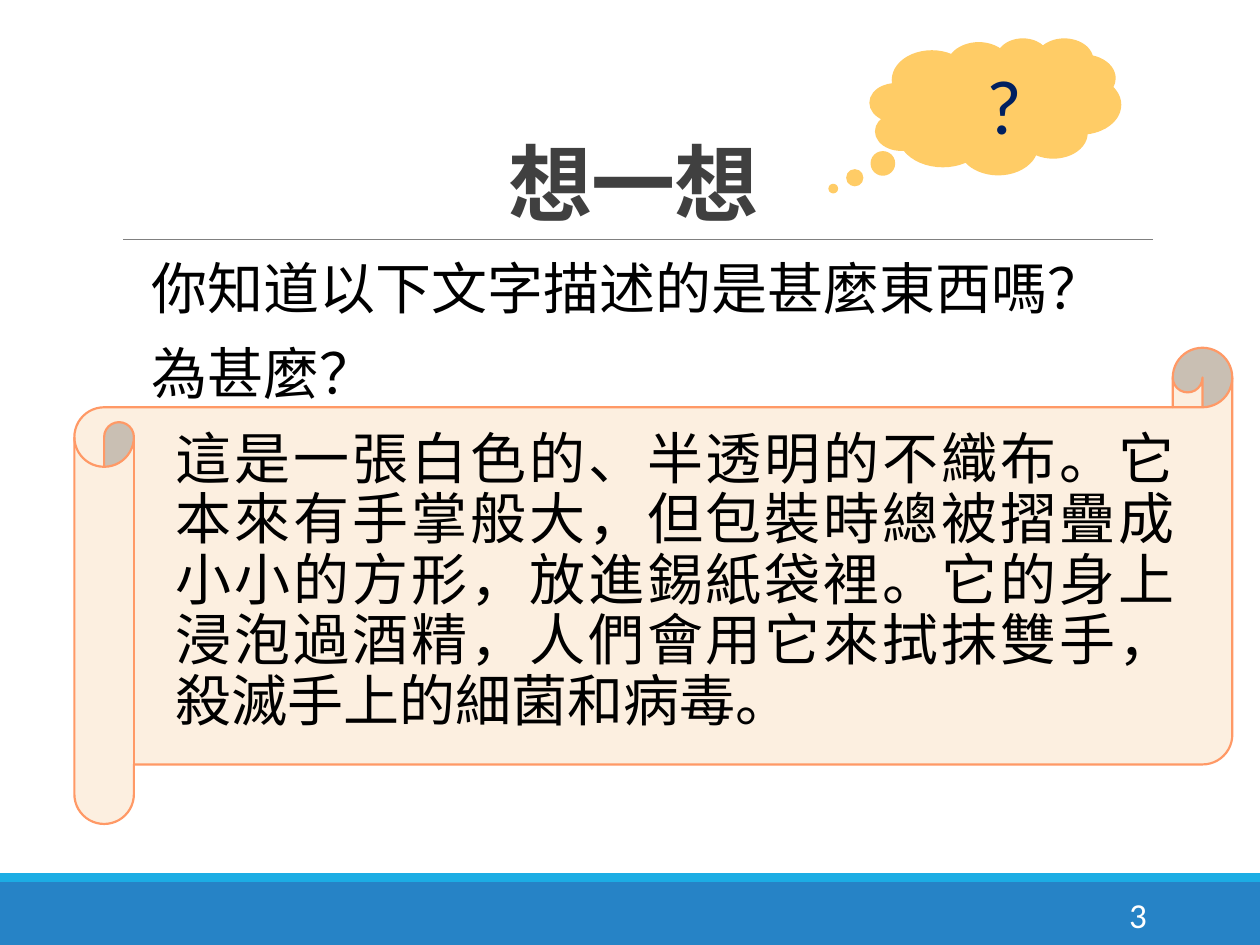
from lxml import etree
from pptx import Presentation
from pptx.dml.color import RGBColor
from pptx.enum.shapes import MSO_CONNECTOR, MSO_SHAPE
from pptx.enum.text import MSO_ANCHOR, MSO_AUTO_SIZE, PP_ALIGN
from pptx.oxml.ns import qn
from pptx.util import Inches, Pt

RECTANGLE = MSO_SHAPE.RECTANGLE
SCROLL = MSO_SHAPE.HORIZONTAL_SCROLL
CLOUD = MSO_SHAPE.CLOUD_CALLOUT
STRAIGHT = MSO_CONNECTOR.STRAIGHT
MIDDLE, BOTTOM, TOP = MSO_ANCHOR.MIDDLE, MSO_ANCHOR.BOTTOM, MSO_ANCHOR.TOP
LEFT, CENTER, RIGHT = PP_ALIGN.LEFT, PP_ALIGN.CENTER, PP_ALIGN.RIGHT
JUSTIFY = PP_ALIGN.JUSTIFY
NO_AUTOFIT = MSO_AUTO_SIZE.NONE

BLUE = RGBColor(0x26, 0x83, 0xC6)
CYAN = RGBColor(0x1C, 0xAD, 0xE4)
GRAY = RGBColor(0x80, 0x80, 0x80)
CREAM = RGBColor(0xFC, 0xEF, 0xE0)
ORANGE = RGBColor(0xFF, 0x99, 0x66)
YELLOW = RGBColor(0xFF, 0xCC, 0x66)
NAVY = RGBColor(0x00, 0x20, 0x60)
DARK = RGBColor(0x40, 0x40, 0x40)
BLACK = RGBColor(0, 0, 0)
WHITE = RGBColor(0xFF, 0xFF, 0xFF)

CHINESE_FONT = "Noto Sans CJK SC"
LATIN_FONT = "Calibri"


def add_filled_shape(preset, left, top, width, height, fill, outline=None):
    shape = slide.shapes.add_shape(
        preset, Inches(left), Inches(top), Inches(width), Inches(height))
    shape.shadow.inherit = False
    shape.fill.solid()
    shape.fill.fore_color.rgb = fill
    if outline is None:
        shape.line.fill.background()
    else:
        shape.line.color.rgb = outline
        shape.line.width = Pt(1.25)
    return shape


def add_text(paragraph, text, font_name, size, color, align):
    """Add one run and set its font for Latin and East Asian text alike."""
    paragraph.alignment = align
    run = paragraph.add_run()
    run.text = text
    run.font.name = font_name
    run.font.size = Pt(size)
    run.font.color.rgb = color
    east_asian = etree.SubElement(run.font._element, qn("a:ea"))
    east_asian.set("typeface", font_name)
    return run


prs = Presentation()
prs.slide_width = Inches(10)
prs.slide_height = Inches(7.5)
slide = prs.slides.add_slide(prs.slide_layouts[1])
title, body = slide.placeholders

# Footer bands and title rule
add_filled_shape(RECTANGLE, 0, 7, 10, 0.5, BLUE)
add_filled_shape(RECTANGLE, 0, 6.93, 10, 0.07, CYAN)
title_rule = slide.shapes.add_connector(
    STRAIGHT, Inches(0.98), Inches(1.9), Inches(9.15), Inches(1.9))
title_rule.line.color.rgb = GRAY
title_rule.line.width = Pt(0.5)
etree.SubElement(title_rule._element.spPr, qn("a:effectLst"))

# The scroll lies behind the title and body text
add_filled_shape(SCROLL, 0.59, 2.76, 9.19, 3.78, CREAM, ORANGE)
for placeholder in (title, body):
    slide.shapes._spTree.append(placeholder._element)

# Title
title.left, title.top = Inches(0.9), Inches(0.31)
title.width, title.height = Inches(8.25), Inches(1.59)
title.text_frame.auto_size = NO_AUTOFIT
title.text_frame.vertical_anchor = BOTTOM
heading = title.text_frame.paragraphs[0]
heading.line_spacing = 0.85
heading_run = add_text(heading, "想一想", CHINESE_FONT, 48, DARK, CENTER)
heading_run.font.bold = True
heading_run.font._element.set("spc", "-50")

# Questions and the description on the scroll
body.left, body.top = Inches(0.9), Inches(2.02)
body.width, body.height = Inches(8.43), Inches(4.4)
body_frame = body.text_frame
body_frame.auto_size = NO_AUTOFIT
body_frame.vertical_anchor = TOP
body_frame.margin_left = body_frame.margin_right = 0
body_lines = [
    ("你知道以下文字描述的是甚麼東西嗎？", 0.3, LEFT),
    ("為甚麼？", 0.3, LEFT),
    ("這是一張白色的、半透明的不織布。它本來有手掌般大，但包裝時總被摺疊成"
     "小小的方形，放進錫紙袋裡。它的身上浸泡過酒精，人們會用它來拭抹雙手，"
     "殺滅手上的細菌和病毒。", 0.49, JUSTIFY),
]
for index, (text, indent, align) in enumerate(body_lines):
    paragraph = body_frame.add_paragraph() if index else body_frame.paragraphs[0]
    paragraph.line_spacing = 0.9
    paragraph.space_before = Pt(12)
    paragraph.space_after = Pt(2)
    add_text(paragraph, text, CHINESE_FONT, 32, BLACK, align)
    properties = paragraph._p.get_or_add_pPr()
    properties.set("marL", str(Inches(indent)))
    properties.set("indent", "0")
    etree.SubElement(properties, qn("a:buNone"))

# Slide number
number_box = slide.shapes.add_textbox(
    Inches(8.12), Inches(7.06), Inches(1.08), Inches(0.4))
number_box.text_frame.word_wrap = True
number_box.text_frame.vertical_anchor = MIDDLE
add_text(number_box.text_frame.paragraphs[0], "3", LATIN_FONT, 20, WHITE, RIGHT)

# Thought cloud
cloud = add_filled_shape(CLOUD, 6.91, 0.31, 1.98, 1.07, YELLOW, YELLOW)
cloud.adjustments[0] = -0.65
cloud.adjustments[1] = 0.61
cloud.text_frame.vertical_anchor = MIDDLE
cloud.text_frame.margin_left = Inches(0.38)
add_text(cloud.text_frame.paragraphs[0], "?", LATIN_FONT, 44, NAVY, CENTER)

prs.save("out.pptx")
